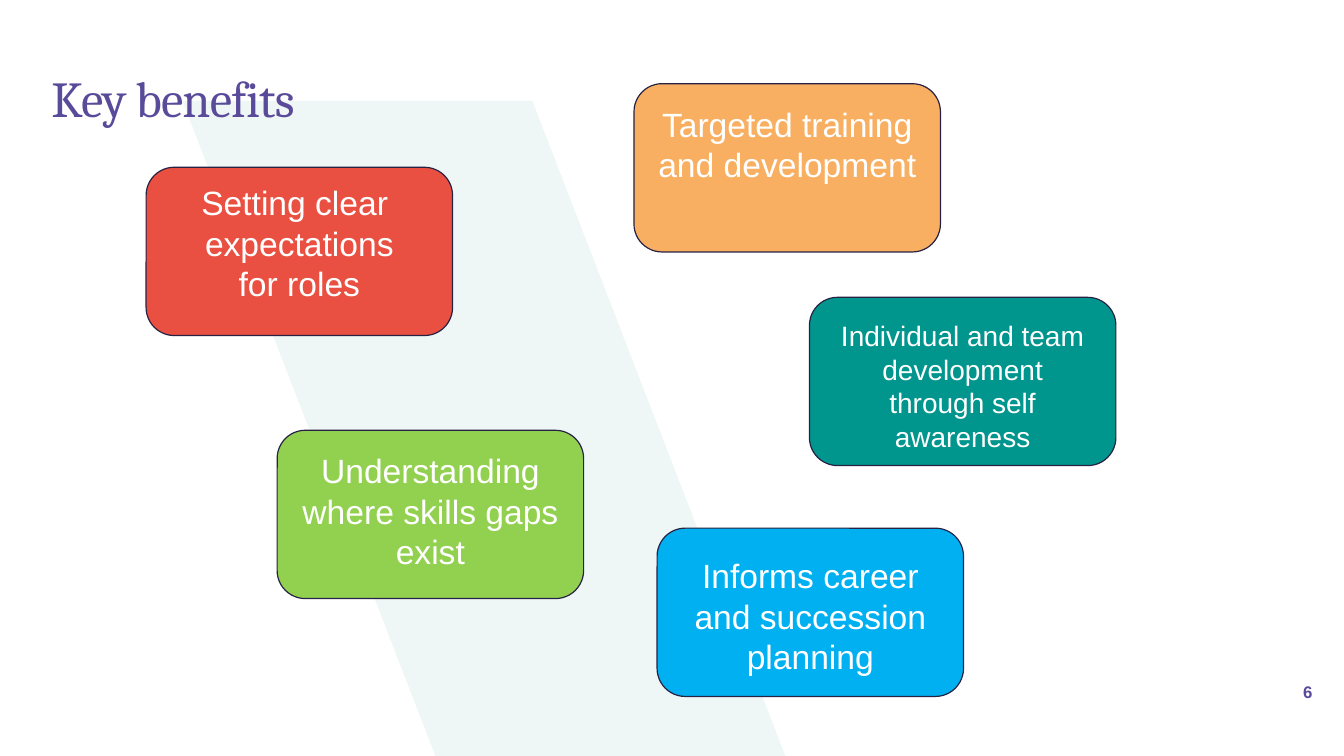
from pptx import Presentation
from pptx.dml.color import RGBColor
from pptx.enum.shapes import MSO_SHAPE
from pptx.enum.text import MSO_ANCHOR, PP_ALIGN
from pptx.util import Pt

COLORS = {
    "band": "EEF7F5", "purple": "5A4B9A", "outline": "272143", "white": "FFFFFF",
    "red": "EA5042", "green": "92D050", "orange": "F8AF61", "blue": "00B0F0", "teal": "00958D",
}
TITLE = "Key benefits"
SLIDE_NUMBER = "6"
# paragraphs, fill, left, top, space above text, text size
BENEFITS = [
    (["Setting clear ", "expectations", "for roles"], "red", 104.4, 119.5, 4.9, 24),
    (["Understanding where skills gaps exist"], "green", 198, 307.4, 8.5, 24),
    (["Targeted training", "and development"], "orange", 452.9, 59.8, 8.5, 24),
    (["Informs career and succession planning"], "blue", 469.4, 377.3, 13.5, 24),
    (["Individual and team development through self awareness"], "teal", 578.2, 212.4, 9.2, 20),
]
CARD_WIDTH, CARD_HEIGHT, CARD_SIDE_MARGIN = 218.9, 120.2, 11
BAND_CORNERS = [(380.2, 72), (130.3, 72), (311, 540), (560.9, 540)]


def color(name):
    return RGBColor.from_string(COLORS[name])


def write_text(shape, paragraphs, size, color_name, font="Arial", bold=False,
               align=PP_ALIGN.LEFT, anchor=MSO_ANCHOR.TOP, margins=(0, 0, 0, 0),
               line_spacing=None, letter_spacing=None):
    """Fill a shape with paragraphs; margins run left, top, right, bottom."""
    frame = shape.text_frame
    frame.word_wrap = True
    frame.vertical_anchor = anchor
    (frame.margin_left, frame.margin_top,
     frame.margin_right, frame.margin_bottom) = map(Pt, margins)
    for index, text in enumerate(paragraphs):
        paragraph = frame.paragraphs[0] if index == 0 else frame.add_paragraph()
        paragraph.alignment = align
        if line_spacing:
            paragraph.line_spacing = line_spacing
        run = paragraph.add_run()
        run.text = text
        run.font.name, run.font.size, run.font.bold = font, Pt(size), bold
        run.font.color.rgb = color(color_name)
        if letter_spacing:
            run.font._element.set("spc", str(round(letter_spacing * 100)))


def add_band(slide):
    points = [(Pt(x), Pt(y)) for x, y in BAND_CORNERS]
    builder = slide.shapes.build_freeform(*points[0])
    builder.add_line_segments(points[1:], close=True)
    band = builder.convert_to_shape()
    band.shadow.inherit = False
    band.fill.solid()
    band.fill.fore_color.rgb = color("band")
    band.line.fill.background()


def add_benefit(slide, paragraphs, fill, left, top, space_above, size):
    card = slide.shapes.add_shape(MSO_SHAPE.ROUNDED_RECTANGLE, Pt(left), Pt(top),
                                  Pt(CARD_WIDTH), Pt(CARD_HEIGHT))
    card.shadow.inherit = False
    card.fill.solid()
    card.fill.fore_color.rgb = color(fill)
    card.line.color.rgb = color("outline")
    card.line.width = Pt(0.85)
    write_text(card, paragraphs, size, "white", align=PP_ALIGN.CENTER,
               margins=(CARD_SIDE_MARGIN, space_above, CARD_SIDE_MARGIN, 0))


def main():
    presentation = Presentation()
    presentation.slide_width, presentation.slide_height = Pt(960), Pt(540)
    slide = presentation.slides.add_slide(presentation.slide_layouts[6])
    add_band(slide)
    title = slide.shapes.add_textbox(Pt(36.7), Pt(52.6), Pt(856), Pt(80))
    write_text(title, [TITLE], 36, "purple", font="Cambria",
               line_spacing=0.9, letter_spacing=-0.6)
    number = slide.shapes.add_textbox(Pt(824.4), Pt(479.5), Pt(120.2), Pt(28.8))
    write_text(number, [SLIDE_NUMBER], 12, "purple", bold=True, align=PP_ALIGN.RIGHT,
               anchor=MSO_ANCHOR.MIDDLE, margins=(7.2, 3.6, 7.2, 3.6))
    for benefit in BENEFITS:
        add_benefit(slide, *benefit)
    presentation.save("out.pptx")


if __name__ == "__main__":
    main()
